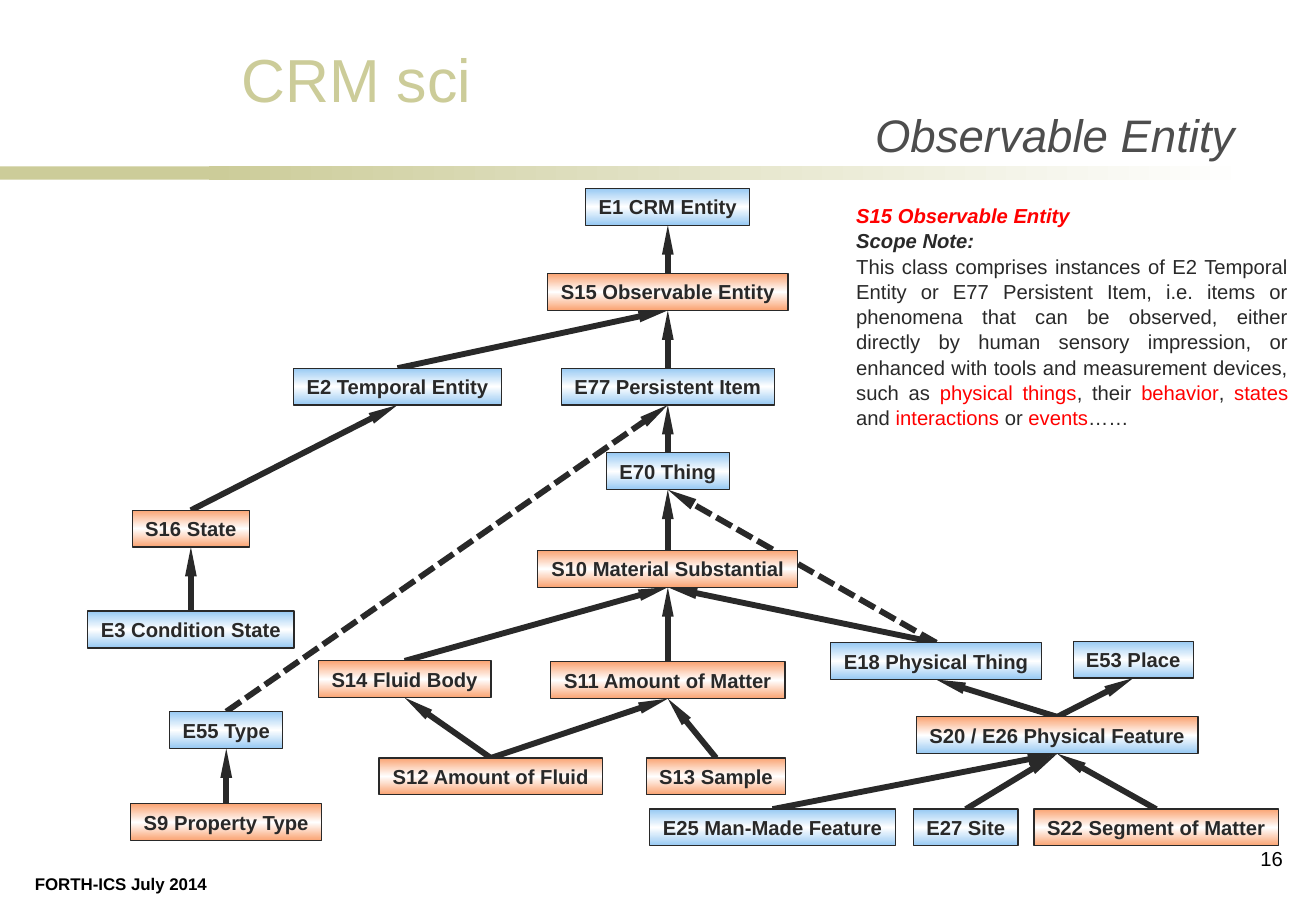
from copy import deepcopy
from dataclasses import dataclass

from pptx import Presentation, util as u
from pptx.dml.color import RGBColor
from pptx.enum import dml, shapes, text
from pptx.oxml import ns, xmlchemy


@dataclass(frozen=True)
class Theme:
    font: str = "Arial"
    ink: str = "292929"
    black: str = "000000"
    grey: str = "4D4D4D"
    sand: str = "CCCC99"
    white: str = "FFFFFF"
    red: str = "FF0000"
    blue: str = "97C9F3"
    peach: str = "FAA372"
    brand: int = 36
    title: int = 27
    body: int = 12
    foot: int = 10


T = Theme()
HIGH = 0.77  # height of a class box, cm
ALIGN = text.PP_ALIGN

# label, centre x, top y, width (cm, from the corner of the tree)
NODES = [
    ("E1 CRM Entity", 12.13, 0, 3.43),
    ("S15 Observable Entity", 12.13, 1.78, 5.03),
    ("E2 Temporal Entity", 6.48, 3.76, 4.34),
    ("E77 Persistent Item", 12.13, 3.76, 4.45),
    ("E70 Thing", 12.13, 5.53, 2.57),
    ("S16 State", 2.16, 6.73, 2.44),
    ("S10 Material Substantial", 12.13, 7.57, 5.44),
    ("E3 Condition State", 2.16, 8.84, 4.32),
    ("S14 Fluid Body", 6.63, 9.88, 3.61),
    ("S11 Amount of Matter", 12.13, 9.9, 4.9),
    ("E18 Physical Thing", 17.74, 9.5, 4.42),
    ("E53 Place", 21.86, 9.47, 2.51),
    ("E55 Type", 2.9, 10.94, 2.36),
    ("S20 / E26 Physical Feature", 20.27, 11.05, 5.89),
    ("S12 Amount of Fluid", 8.43, 11.91, 4.67),
    ("S13 Sample", 13.14, 11.91, 2.92),
    ("S9 Property Type", 2.9, 12.87, 3.99),
    ("E25 Man-Made Feature", 14.32, 12.98, 5.13),
    ("E27 Site", 18.36, 12.98, 2.18),
    ("S22 Segment of Matter", 22.34, 12.98, 5.11),
]
# parent: children
LINKS = {
    "E1": "S15", "S15": "E2 E77", "E2": "S16", "E77": "E70", "S16": "E3",
    "E70": "S10", "S10": "S14 S11 E18", "S14": "S12", "S11": "S12 S13",
    "E18": "S20", "E53": "S20", "S20": "E25 E27 S22", "E55": "S9",
}
DOTS = {"E77": "E55", "E70": "E18"}

# words between bars are red
SCOPE = ("This class comprises instances of E2 Temporal Entity or E77 "
         "Persistent Item, i.e. items or phenomena that can be observed, "
         "either directly by human sensory impression, or enhanced with "
         "tools and measurement devices, such as |physical things|, their "
         "|behavior|, |states| and |interactions| or |events|……")


def paint(color):
    return RGBColor.from_string(color)


def write(para, words, size=T.body, color=T.ink, bold=False, slant=False,
          align=ALIGN.LEFT):
    para.alignment = align
    run = para.add_run()
    run.text = words
    font = run.font
    font.name, font.size = T.font, u.Pt(size)
    font.bold, font.italic = bold, slant
    font.color.rgb = paint(color)


def frame(slide, box, wrap=True, anchor=text.MSO_ANCHOR.TOP):
    area = slide.shapes.add_textbox(*map(u.Cm, box)).text_frame
    area.word_wrap, area.vertical_anchor = wrap, anchor
    return area


def block(slide, box, colors, angle=0):
    """Add a borderless rectangle filled with one colour or an even gradient."""
    rect = slide.shapes.add_shape(shapes.MSO_SHAPE.RECTANGLE, *map(u.Cm, box))
    rect.shadow.inherit = False
    rect.line.fill.background()
    if len(colors) == 1:
        rect.fill.solid()
        rect.fill.fore_color.rgb = paint(colors[0])
        return rect
    rect.fill.gradient()
    rect.fill.gradient_angle = angle
    stops = rect._element.spPr.find(".//" + ns.qn("a:gsLst"))
    for _ in colors[2:]:
        stops.insert(1, deepcopy(stops[0]))
    for i, (stop, color) in enumerate(zip(rect.fill.gradient_stops, colors)):
        stop.position = i / (len(colors) - 1)
        stop.color.rgb = paint(color)
    return rect


def node(slide, label, mid, top, wide):
    first = T.blue if label[0] == "E" else T.peach
    last = T.blue if "/ E" in label else first
    rect = block(slide, (mid - wide / 2, top, wide, HIGH),
                 (first, T.white, last), angle=270)
    rect.line.color.rgb = paint(T.ink)
    rect.line.width = u.Pt(0.75)
    area = rect.text_frame
    area.word_wrap = False
    area.vertical_anchor = text.MSO_ANCHOR.MIDDLE
    write(area.paragraphs[0], label, bold=True, align=ALIGN.CENTER)
    return rect


def arrow(slide, child, parent, dotted):
    """Join the top of child to the foot of parent, behind all boxes."""
    link = slide.shapes.add_connector(shapes.MSO_CONNECTOR.STRAIGHT, 0, 0, 0, 0)
    link.begin_connect(child, 0)
    link.end_connect(parent, 2)
    link.line.color.rgb = paint(T.ink)
    link.line.width = u.Pt(3.5)
    if dotted:
        link.line.dash_style = dml.MSO_LINE.SQUARE_DOT
    props = link._element.spPr
    head = xmlchemy.OxmlElement("a:tailEnd")
    for key, val in (("type", "triangle"), ("w", "sm"), ("len", "lg")):
        head.set(key, val)
    props.find(ns.qn("a:ln")).append(head)
    props.append(xmlchemy.OxmlElement("a:effectLst"))
    slide.shapes._spTree.insert(2, link._element)


def tree(slide, left, top):
    rects = {label.split()[0]: node(slide, label, left + mid, top + y, wide)
             for label, mid, y, wide in NODES}
    for links, dotted in ((LINKS, False), (DOTS, True)):
        for parent, kids in links.items():
            for kid in kids.split():
                arrow(slide, rects[kid], rects[parent], dotted)


def header(slide, left, top, wide):
    brand = frame(slide, (left + 4.8, top + 0.74, 5.36, 1.8), wrap=False)
    write(brand.paragraphs[0], "CRM sci", size=T.brand, color=T.sand)
    title = frame(slide, (left + 5.36, top + 1.7, 20.7, 1.8),
                  anchor=text.MSO_ANCHOR.BOTTOM)
    write(title.paragraphs[0], "Observable Entity", size=T.title,
          color=T.grey, slant=True, align=ALIGN.RIGHT)
    rule = top + 3.48
    block(slide, (left, rule, 6.43, 0.28), (T.sand,))
    block(slide, (left + 4.37, rule, wide - 5.72, 0.28), (T.sand, T.white))


def note(slide, box):
    area = frame(slide, box)
    paras = [area.paragraphs[0], area.add_paragraph(), area.add_paragraph()]
    for para in paras:
        para.line_spacing = 1.04
    for para, words, color in zip(
            paras, ("S15 Observable Entity", "Scope Note:"), (T.red, T.ink)):
        write(para, words, color=color, bold=True, slant=True,
              align=ALIGN.JUSTIFY)
    for i, part in enumerate(SCOPE.split("|")):
        write(paras[2], part, color=(T.ink, T.red)[i % 2],
              align=ALIGN.JUSTIFY)


def footer(slide, left, top):
    date = frame(slide, (left + 0.48, top + 0.56, 4.14, 0.69), wrap=False)
    write(date.paragraphs[0], "FORTH-ICS July 2014", size=T.foot,
          color=T.black, bold=True)
    page = frame(slide, (left + 25.83, top, 1.24, 1.07))
    write(page.paragraphs[0], "16", color=T.black, align=ALIGN.RIGHT)


def main():
    deck = Presentation()
    deck.slide_width, deck.slide_height = u.Cm(27.51), u.Cm(19.05)
    slide = deck.slides.add_slide(deck.slide_layouts[6])
    header(slide, 0, 0, 27.51)
    tree(slide, 1.83, 3.94)
    note(slide, (17.65, 4.11, 9.53, 4.88))
    footer(slide, 0, 17.58)
    deck.save("out.pptx")


if __name__ == "__main__":
    main()
